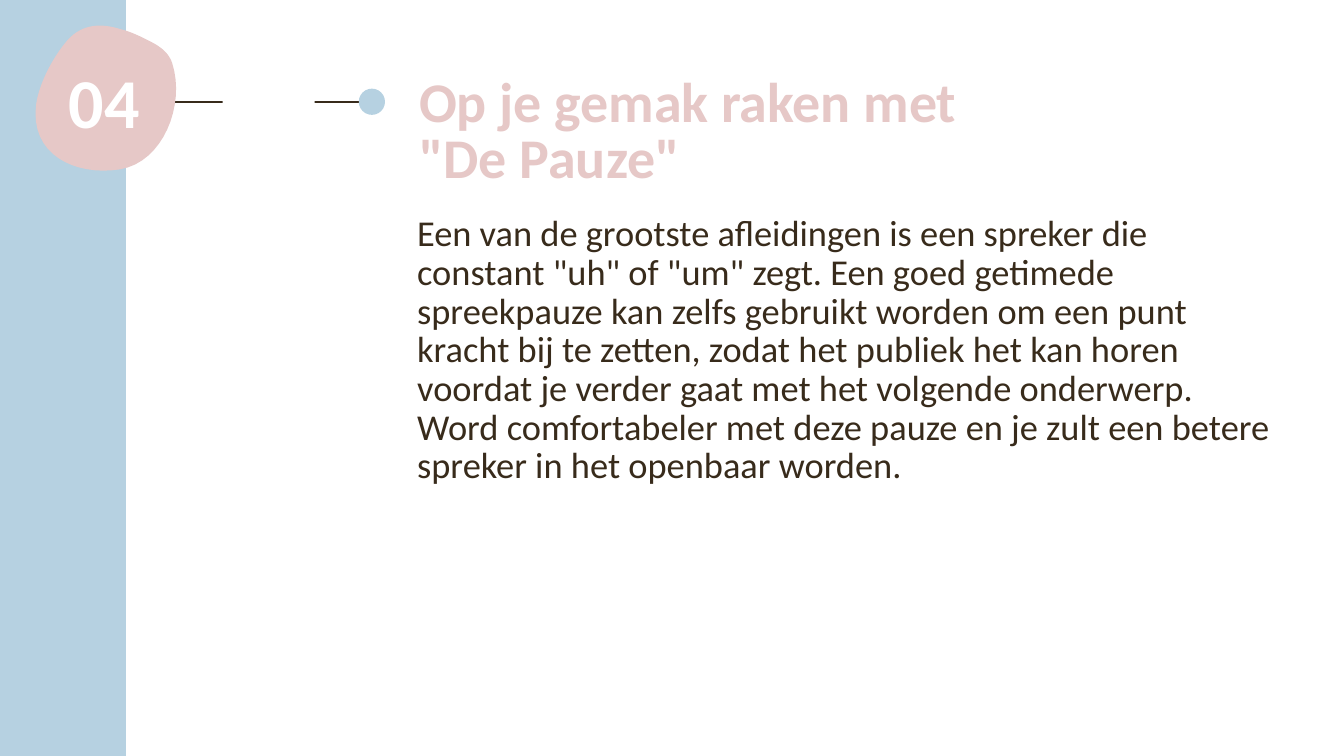
from lxml import etree
from pptx import Presentation
from pptx.dml.color import RGBColor
from pptx.enum.shapes import MSO_CONNECTOR, MSO_SHAPE
from pptx.enum.text import MSO_ANCHOR, PP_ALIGN
from pptx.oxml.ns import qn
from pptx.util import Pt

STRAIGHT = MSO_CONNECTOR.STRAIGHT
RECTANGLE, OVAL = MSO_SHAPE.RECTANGLE, MSO_SHAPE.OVAL
TOP = MSO_ANCHOR.TOP
LEFT, CENTER = PP_ALIGN.LEFT, PP_ALIGN.CENTER

WIDTH, HEIGHT = 960, 540
FONT = "Calibri"
BLUE, PINK, BROWN, WHITE = "B6D1E1", "E6C8C7", "382B1B", "FFFFFF"

NUMBER = "04"
TITLE = 'Op je gemak raken met "De Pauze"'
BODY = (
    'Een van de grootste afleidingen is een spreker die constant "uh" of "um" zegt. '
    "Een goed getimede spreekpauze kan zelfs gebruikt worden om een punt kracht bij "
    "te zetten, zodat het publiek het kan horen voordat je verder gaat met het "
    "volgende onderwerp. Word comfortabeler met deze pauze en je zult een betere "
    "spreker in het openbaar worden."
)

# Badge outline in points from its top left corner: start, then cubic curves
BADGE_START = (61.2, 2.9)
BADGE_CURVES = [
    ((47.5, -1.4), (33.8, -1.4), (23, 10.8)),
    ((13, 22.3), (2.9, 41), (0.7, 56.2)),
    ((-4.3, 92.2), (28.1, 108), (60.5, 103)),
    ((91.4, 97.9), (107.3, 56.9), (97.9, 27.4)),
    ((95, 18), (86.4, 13.7), (79.2, 10.1)),
    ((73.4, 7.2), (67, 4.3), BADGE_START),
]
CURVE_STEPS = 16


def color(hex_string):
    return RGBColor.from_string(hex_string)


def paint(shape, fill):
    shape.shadow.inherit = False
    shape.fill.solid()
    shape.fill.fore_color.rgb = color(fill)
    shape.line.fill.background()


def add_block(slide, preset, left, top, width, height, fill):
    block = slide.shapes.add_shape(preset, Pt(left), Pt(top), Pt(width), Pt(height))
    paint(block, fill)


def add_text(slide, box, text, size, fill, spacing, bold=False, align=LEFT, right_inset=7.2):
    frame = slide.shapes.add_textbox(*(Pt(length) for length in box)).text_frame
    frame.word_wrap = True
    frame.vertical_anchor = TOP
    frame.margin_right = Pt(right_inset)
    frame.text = text
    paragraph = frame.paragraphs[0]
    paragraph.alignment = align
    paragraph.line_spacing = spacing
    font = paragraph.runs[0].font
    font.name, font.size, font.bold = FONT, Pt(size), bold
    font.color.rgb = color(fill)


def curve_points(start, curves):
    """Points along a chain of cubic curves."""
    points = []
    for first, second, end in curves:
        for step in range(1, CURVE_STEPS + 1):
            t = step / CURVE_STEPS
            u = 1 - t
            weights = (u**3, 3 * u * u * t, 3 * u * t * t, t**3)
            corners = (start, first, second, end)
            points.append(tuple(
                sum(w * corner[axis] for w, corner in zip(weights, corners))
                for axis in (0, 1)
            ))
        start = end
    return points


def add_leader(slide, left, middle, length):
    """Line with an end dot, interrupted by a white gap."""
    leader = slide.shapes.add_connector(
        STRAIGHT, Pt(left + length), Pt(middle), Pt(left), Pt(middle))
    leader.line.color.rgb = color(BROWN)
    leader.line.width = Pt(1.5)
    etree.SubElement(leader._element.spPr, qn("a:effectLst"))
    dot = 18.7
    add_block(slide, OVAL, left + length - 5.8, middle - dot / 2, dot, dot, BLUE)
    add_block(slide, RECTANGLE, left + 50.4, middle - 28.8, 65.7, 328, WHITE)


def add_badge(slide, left, top):
    """Rounded pebble holding the section number."""
    scale = 100
    builder = slide.shapes.build_freeform(
        round(BADGE_START[0] * scale), round(BADGE_START[1] * scale), Pt(1) / scale)
    builder.add_line_segments(
        [(round(x * scale), round(y * scale))
         for x, y in curve_points(BADGE_START, BADGE_CURVES)], close=True)
    paint(builder.convert_to_shape(Pt(left), Pt(top)), PINK)
    add_text(slide, (left - 11.5, top + 27.4, 121.7, 67.7), NUMBER, 50, WHITE, 0.9,
             bold=True, align=CENTER)


def add_content(slide, left, top, width):
    """Title with the explanation below it."""
    add_text(slide, (left, top + 98.6, width, 149.8), BODY, 26, BROWN, Pt(27.6),
             right_inset=4)
    add_text(slide, (left + 1.4, top, 401.8, 127.4), TITLE, 40, PINK, Pt(40.2),
             bold=True, right_inset=0)


def main():
    deck = Presentation()
    deck.slide_width, deck.slide_height = Pt(WIDTH), Pt(HEIGHT)
    slide = deck.slides.add_slide(deck.slide_layouts[6])
    add_leader(slide, 108.7, 72.7, 153.4)
    add_block(slide, RECTANGLE, 0, 0, 90, HEIGHT, BLUE)  # side band
    add_content(slide, 290.9, 51.8, 627.1)
    add_badge(slide, 25.2, 18)
    deck.save("out.pptx")


if __name__ == "__main__":
    main()
